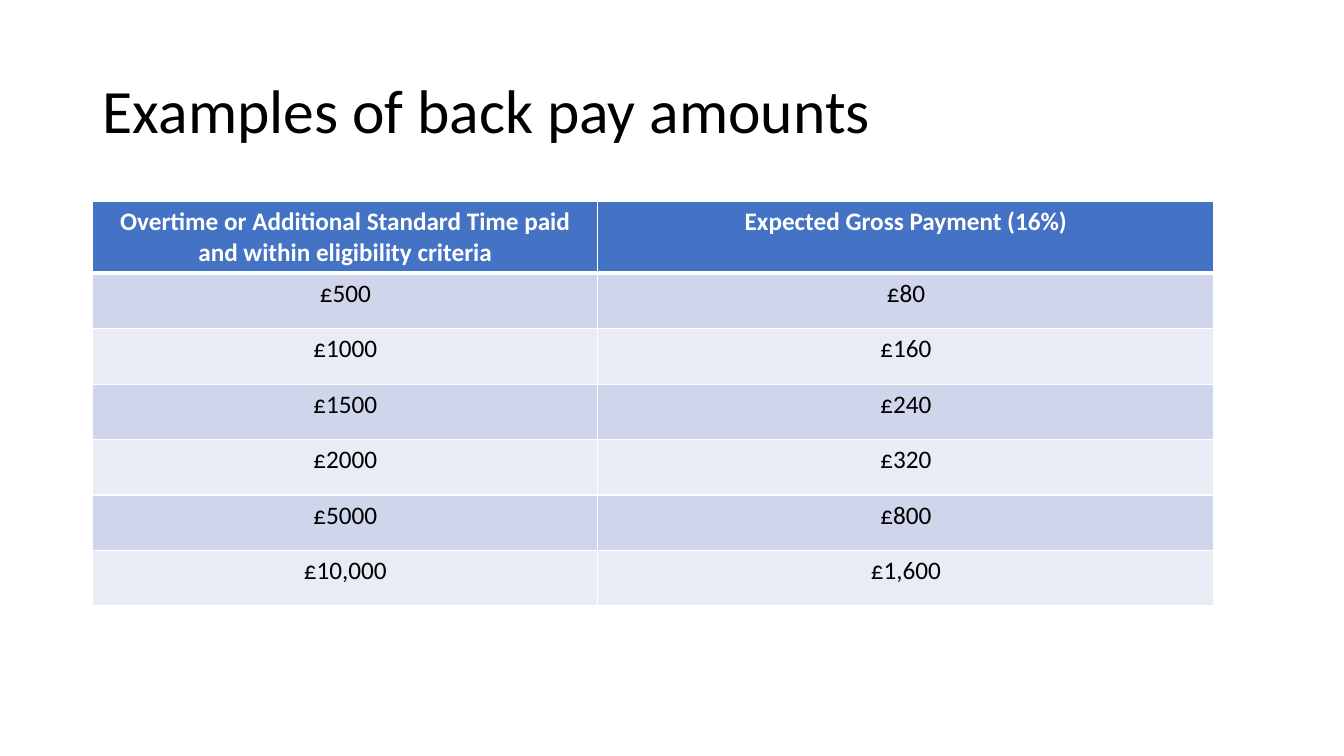
from dataclasses import dataclass

from lxml.etree import SubElement
from pptx import Presentation
from pptx.dml.color import RGBColor
from pptx.enum.text import MSO_ANCHOR as Anchor, PP_ALIGN as Align
from pptx.oxml.ns import qn
from pptx.util import Inches, Pt


@dataclass(frozen=True)
class Theme:
    """Colours, font and type sizes of the slide."""
    font: str = "Calibri"
    title_size: int = 44
    cell_size: int = 18
    text: str = "000000"
    white: str = "FFFFFF"
    header: str = "4472C4"
    bands: tuple = ("CFD5EA", "E9EBF5")


THEME = Theme()
ROWS = [
    ("Overtime or Additional Standard Time paid and within eligibility criteria",
     "Expected Gross Payment (16%)"),
    ("£500", "£80"),
    ("£1000", "£160"),
    ("£1500", "£240"),
    ("£2000", "£320"),
    ("£5000", "£800"),
    ("£10,000", "£1,600"),
]
COLUMN_WIDTHS = (5.01, 6.11)
ROW_HEIGHT = 0.55


def write(tf, text, size, color=THEME.text, bold=False, align=Align.LEFT, spacing=None):
    """Put one formatted paragraph into a text frame."""
    p = tf.paragraphs[0]
    p.alignment = align
    p.line_spacing = spacing
    r = p.add_run()
    r.text = text
    r.font.name = THEME.font
    r.font.size = Pt(size)
    r.font.bold = bold
    r.font.color.rgb = RGBColor.from_string(color)


def set_borders(cell, color, bottom):
    """Draw one-point cell borders with a chosen bottom width."""
    tc_pr = cell._tc.get_or_add_tcPr()
    for side, width in zip("LRTB", (1, 1, 1, bottom)):
        ln = SubElement(tc_pr, qn(f"a:ln{side}"), w=str(Pt(width)))
        fill = SubElement(ln, qn("a:solidFill"))
        SubElement(fill, qn("a:srgbClr"), val=color)


def add_title(s, text):
    """Place and fill the title placeholder."""
    title = s.shapes.title
    title.left, title.top = Inches(0.92), Inches(0.4)
    title.width, title.height = Inches(11.5), Inches(1.45)
    tf = title.text_frame
    tf.word_wrap = True
    tf.vertical_anchor = Anchor.MIDDLE
    write(tf, text, THEME.title_size, spacing=0.9)


def add_payment_table(s, rows):
    """Add the banded table of payments below a header row."""
    table = s.shapes.add_table(
        len(rows), len(COLUMN_WIDTHS), Inches(0.92), Inches(2),
        Inches(sum(COLUMN_WIDTHS)), Inches(ROW_HEIGHT * len(rows))).table
    for column, width in zip(table.columns, COLUMN_WIDTHS):
        column.width = Inches(width)
    for i, values in enumerate(rows):
        table.rows[i].height = Inches(ROW_HEIGHT)
        is_header = i == 0
        fill = THEME.header if is_header else THEME.bands[(i - 1) % 2]
        for j, value in enumerate(values):
            cell = table.cell(i, j)
            set_borders(cell, THEME.white, bottom=3 if is_header else 1)
            cell.fill.solid()
            cell.fill.fore_color.rgb = RGBColor.from_string(fill)
            write(cell.text_frame, value, THEME.cell_size, bold=is_header,
                  color=THEME.white if is_header else THEME.text, align=Align.CENTER)


def main():
    """Build and save the slide."""
    prs = Presentation()
    prs.slide_width, prs.slide_height = Inches(13.33), Inches(7.5)
    s = prs.slides.add_slide(prs.slide_layouts[5])
    add_title(s, "Examples of back pay amounts")
    add_payment_table(s, ROWS)
    prs.save("out.pptx")


if __name__ == "__main__":
    main()
